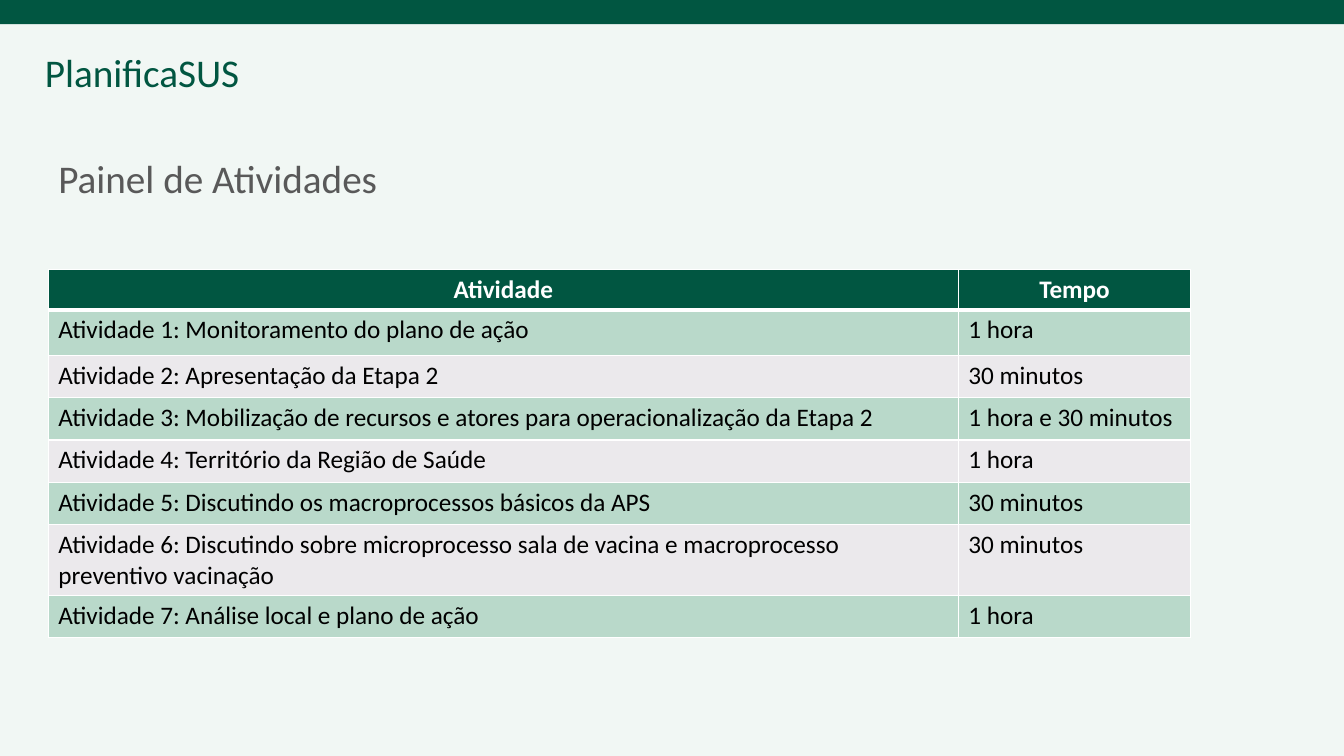
"""Build the activity panel slide with its schedule table."""
from lxml import etree
from pptx import Presentation, util as u
from pptx.dml.color import RGBColor
from pptx.enum import shapes, text
from pptx.oxml.ns import qn

COLORS = {"green": "015641", "mint": "B9D9CA", "grey": "EBE9EC", "title": "595959",
          "white": "FFFFFF", "black": "000000", "back": "F1F7F4"}
RGB = {name: RGBColor.from_string(value) for name, value in COLORS.items()}

prs = Presentation()
prs.slide_width, prs.slide_height = u.Inches(13.33), u.Inches(7.5)
col, row = prs.slide_width / 100, prs.slide_height / 100
s = prs.slides.add_slide(prs.slide_layouts[6])
s.background.fill.solid()
s.background.fill.fore_color.rgb = RGB["back"]


def place(x, y, w, h):
    return [u.Emu(round(v)) for v in (x * col, y * row, w * col, h * row)]


def write(tf, words, size, color, bold=False, align=text.PP_ALIGN.LEFT):
    p = tf.paragraphs[0]
    p.alignment = align
    r = p.add_run()
    r.text = words
    style = {"name": "Calibri", "size": u.Pt(size), "bold": bold}
    for key, value in style.items():
        setattr(r.font, key, value)
    r.font.color.rgb = RGB[color]
    return p


band = s.shapes.add_shape(shapes.MSO_SHAPE.RECTANGLE, *place(0, 0, 100, 3.2))
band.shadow.inherit = False
band.fill.solid()
band.fill.fore_color.rgb = RGB["green"]
band.line.fill.background()

headings = [
    ("PlanificaSUS", (2.6, 5.7, 16.1, 7.6), "green", False, text.MSO_ANCHOR.TOP, 1),
    ("Painel de Atividades", (3.6, 14.3, 82.4, 19.3), "title", True, text.MSO_ANCHOR.MIDDLE, 0.9),
]
for words, spot, color, wrap, anchor, spacing in headings:
    tf = s.shapes.add_textbox(*place(*spot)).text_frame
    tf.word_wrap, tf.vertical_anchor = wrap, anchor
    write(tf, words, 28, color).line_spacing = spacing

activities = [
    ("Atividade", "Tempo"),
    ("Atividade 1: Monitoramento do plano de ação", "1 hora"),
    ("Atividade 2: Apresentação da Etapa 2", "30 minutos"),
    ("Atividade 3: Mobilização de recursos e atores para operacionalização da Etapa 2",
     "1 hora e 30 minutos"),
    ("Atividade 4: Território da Região de Saúde", "1 hora"),
    ("Atividade 5: Discutindo os macroprocessos básicos da APS", "30 minutos"),
    ("Atividade 6: Discutindo sobre microprocesso sala de vacina e macroprocesso "
     "preventivo vacinação", "30 minutos"),
    ("Atividade 7: Análise local e plano de ação", "1 hora"),
]
widths = [67.7, 17.3]
heights = [5.4, 6, 5.6, 5.6, 5.6, 5.6, 9.4, 5.6]
table = s.shapes.add_table(len(activities), len(widths),
                           *place(3.6, 35.6, sum(widths), sum(heights))).table
for column, width in zip(table.columns, widths):
    column.width = u.Emu(round(width * col))

for i, (activity, height) in enumerate(zip(activities, heights)):
    table.rows[i].height = u.Emu(round(height * row))
    header = i == 0
    fill = "green" if header else ("grey", "mint")[i % 2]
    color = "white" if header else "black"
    align = text.PP_ALIGN.CENTER if header else text.PP_ALIGN.LEFT
    edges = {"lnL": 1, "lnR": 1, "lnT": 3 if i == 1 else 1, "lnB": 3 if header else 1}
    for j, words in enumerate(activity):
        cell = table.cell(i, j)
        write(cell.text_frame, words, 18, color, header, align)
        tcPr = cell._tc.get_or_add_tcPr()
        for edge, width in edges.items():
            ln = etree.SubElement(tcPr, qn(f"a:{edge}"), w=str(u.Pt(width)))
            solid = etree.SubElement(ln, qn("a:solidFill"))
            etree.SubElement(solid, qn("a:srgbClr"), val=COLORS["white"])
        cell.fill.solid()
        cell.fill.fore_color.rgb = RGB[fill]

prs.save("out.pptx")
